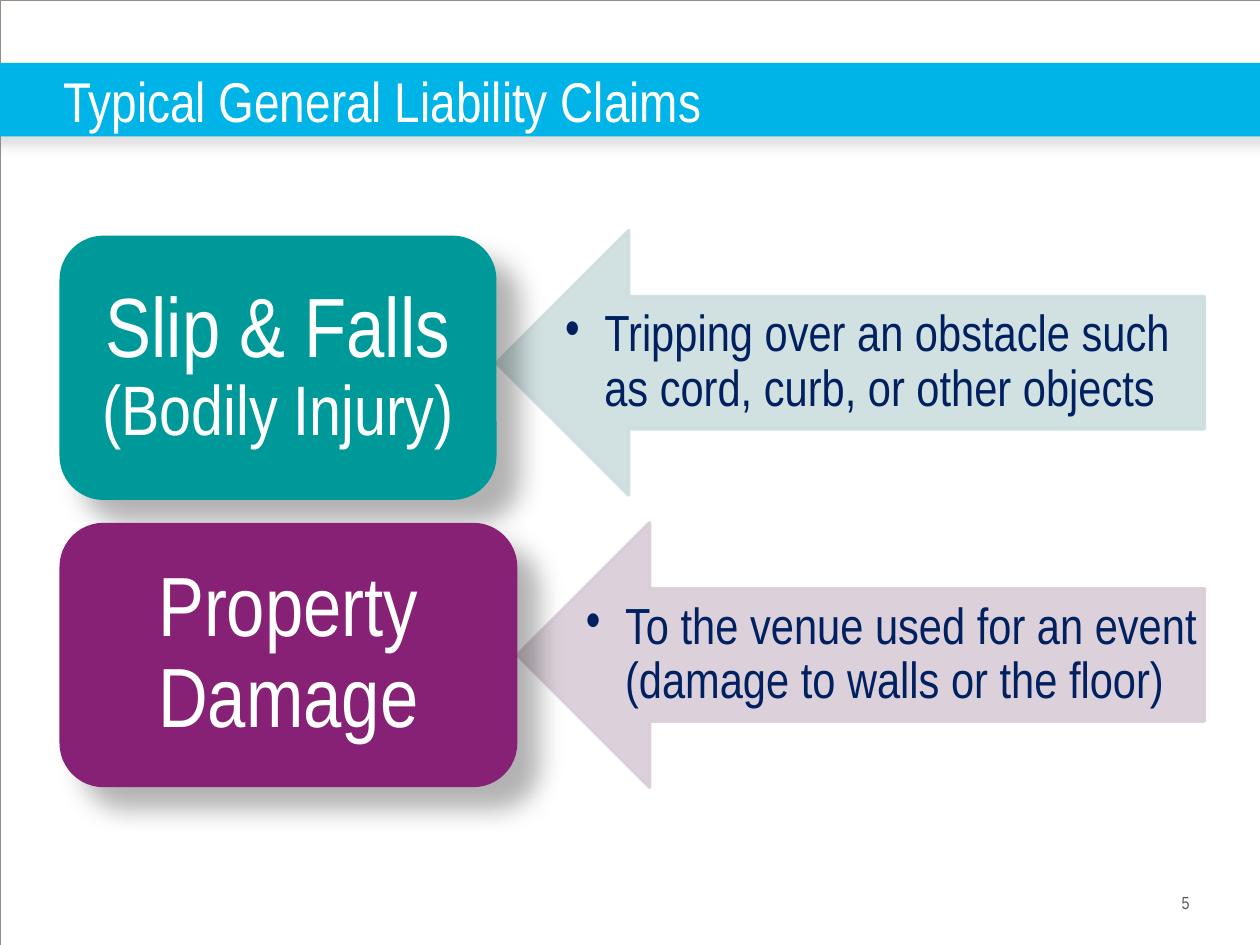
import pptx
import pptx.util
import pptx.dml.color
import pptx.enum.shapes
import pptx.enum.text
import pptx.oxml.ns
import lxml.etree

Cm, Pt = pptx.util.Cm, pptx.util.Pt
SHAPE = pptx.enum.shapes.MSO_SHAPE
ALIGN = pptx.enum.text.PP_ALIGN
MIDDLE = pptx.enum.text.MSO_ANCHOR.MIDDLE
qn = pptx.oxml.ns.qn

# Content
TITLE = "Typical General Liability Claims"
PAGE_NUMBER = "5"
CLAIMS = [
    {"heading": [("Slip & Falls ", 48), ("(Bodily Injury)", 40)],
     "example": "Tripping over an obstacle such as cord, curb, or other objects",
     "card": "teal", "arrow": "pale teal",
     "card_top": 4.75, "arrow_top": 4.65, "card_width": 8.81},
    {"heading": [("Property Damage", 48)],
     "example": "To the venue used for an event (damage to walls or the floor)",
     "card": "purple", "arrow": "pale purple",
     "card_top": 10.54, "arrow_top": 10.54, "card_width": 9.23},
]

# Style and layout, in centimetres
COLORS = {"white": "FFFFFF", "band": "01B4E7", "frame": "958D85",
          "gray": "58585A", "navy": "002060", "black": "000000",
          "band shadow": "808080", "teal": "009999", "pale teal": "CCDEDE",
          "purple": "872175", "pale purple": "D9CDD6"}
FONT = "Arial Narrow"
SLIDE_W, SLIDE_H = 25.4, 19.05
BAND_TOP, BAND_H = 1.27, 1.48
LEFT, RIGHT = 1.2, 24.28
ROW_H = 5.33


def rgb(name):
    return pptx.dml.color.RGBColor.from_string(COLORS[name])


def place(shape, left, top, width, height):
    shape.left, shape.top = Cm(left), Cm(top)
    shape.width, shape.height = Cm(width), Cm(height)


def add_shape(kind, left, top, width, height, fill=None):
    shape = slide.shapes.add_shape(kind, Cm(left), Cm(top), Cm(width), Cm(height))
    shape.shadow.inherit = False
    shape.line.fill.background()
    if fill:
        shape.fill.solid()
        shape.fill.fore_color.rgb = rgb(fill)
    else:
        shape.fill.background()
    return shape


def set_alpha(parent, percent):
    for color in parent.iter(qn("a:srgbClr")):
        lxml.etree.SubElement(color, qn("a:alpha"), val=str(percent * 1000))


def add_shadow(shape, color, alpha, blur, distance, angle):
    effects = shape._element.spPr.find(qn("a:effectLst"))
    shadow = lxml.etree.SubElement(
        effects, qn("a:outerShdw"), blurRad=str(Pt(blur)), dist=str(Pt(distance)),
        dir=str(angle * 60000), algn="tl", rotWithShape="0")
    lxml.etree.SubElement(shadow, qn("a:srgbClr"), val=COLORS[color])
    set_alpha(shadow, alpha)


def set_frame(shape, side, vertical):
    frame = shape.text_frame
    frame.word_wrap = True
    frame.auto_size = pptx.enum.text.MSO_AUTO_SIZE.NONE
    frame.vertical_anchor = MIDDLE
    frame.margin_left = frame.margin_right = Cm(side)
    frame.margin_top = frame.margin_bottom = Cm(vertical)
    return frame.paragraphs[0]


def add_run(paragraph, text, size, color):
    run = paragraph.add_run()
    run.text = text
    run.font.name, run.font.size = FONT, Pt(size)
    run.font.color.rgb = rgb(color)


def add_bullet(paragraph, indent):
    props = paragraph._p.get_or_add_pPr()
    props.set("marL", str(Cm(indent)))
    props.set("indent", str(-Cm(indent)))
    lxml.etree.SubElement(props, qn("a:buFont"), typeface=FONT)
    lxml.etree.SubElement(props, qn("a:buChar"), char="•")


deck = pptx.Presentation()
deck.slide_width, deck.slide_height = Cm(SLIDE_W), Cm(SLIDE_H)
slide = deck.slides.add_slide(deck.slide_layouts[5])

# Page number
number = slide.shapes.add_textbox(Cm(19.53), Cm(17.98), Cm(4.45), Cm(0.43))
line = set_frame(number, 0, 0)
line.alignment = ALIGN.RIGHT
add_run(line, PAGE_NUMBER, 10, "gray")

# Slide frame and title band
border = add_shape(SHAPE.RECTANGLE, 0, 0, SLIDE_W, SLIDE_H)
border.line.color.rgb = rgb("frame")
border.line.width = Pt(0.13)
band = add_shape(SHAPE.RECTANGLE, -0.2, BAND_TOP, SLIDE_W + 0.4, BAND_H, "band")
add_shadow(band, "band shadow", 25, 7, 4.8, 90)

# Title, brought in front of the band
title = slide.shapes.title
place(title, 1.27, BAND_TOP, 23.06, BAND_H)
band._element.addnext(title._element)
line = set_frame(title, 0, 0)
line.alignment = ALIGN.LEFT
add_run(line, TITLE, 32, "white")

# Each claim: an arrow with an example, pointing at its card
for claim in CLAIMS:
    tip = LEFT + claim["card_width"]
    arrow = add_shape(SHAPE.LEFT_ARROW, tip, claim["arrow_top"],
                      RIGHT - tip, ROW_H, claim["arrow"])
    arrow.line.color.rgb = rgb(claim["arrow"])
    arrow.line.width = Pt(2)
    set_alpha(arrow._element.spPr, 90)
    line = set_frame(arrow, 0.05, 0.05)
    add_bullet(line, 0.79)
    line.alignment = ALIGN.LEFT
    line.line_spacing = 0.9
    add_run(line, claim["example"], 29, "navy")

    card = add_shape(SHAPE.ROUNDED_RECTANGLE, LEFT, claim["card_top"],
                     claim["card_width"], ROW_H, claim["card"])
    add_shadow(card, "black", 30, 15, 18, 45)
    line = set_frame(card, 0.5, 0.25)
    line.alignment = ALIGN.CENTER
    line.line_spacing = 0.9
    for text, size in claim["heading"]:
        add_run(line, text, size, "white")

deck.save("out.pptx")
